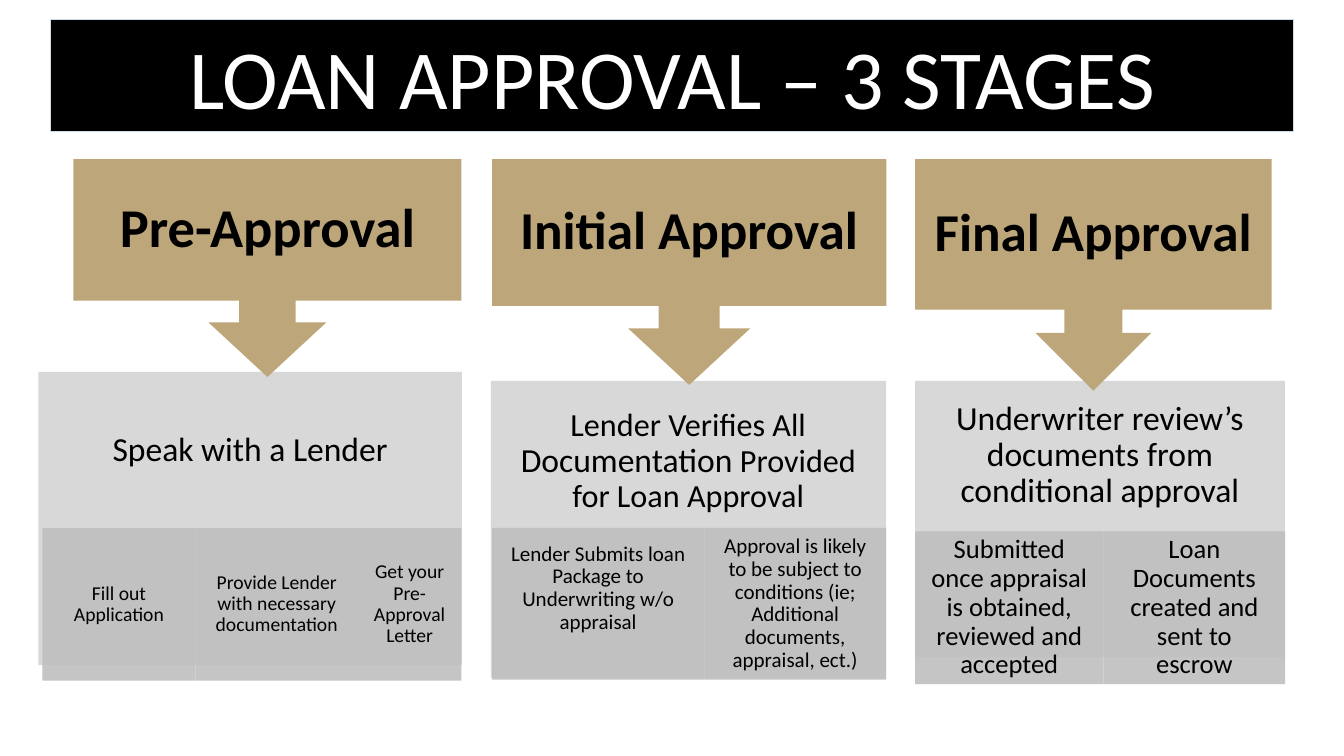
import pptx
import pptx.util
import pptx.dml.color
import pptx.enum.shapes
import pptx.enum.text
import lxml.etree

Cm, Pt = pptx.util.Cm, pptx.util.Pt
RGBColor = pptx.dml.color.RGBColor
Kind = pptx.enum.shapes.MSO_SHAPE
Align = pptx.enum.text.PP_ALIGN
Anchor = pptx.enum.text.MSO_ANCHOR

BLACK = RGBColor(0x00, 0x00, 0x00)
WHITE = RGBColor(0xFF, 0xFF, 0xFF)
EDGE = RGBColor(0xCE, 0xDB, 0xE6)
GOLD = RGBColor(0xBD, 0xA6, 0x79)
PALE = RGBColor(0xD8, 0xD8, 0xD8)
GREY = RGBColor(0xBF, 0xBF, 0xBF)
A = "http://schemas.openxmlformats.org/drawingml/2006/main"

# Boxes are left, top, width, height in cm; pads are left/right, top, bottom.
# "edges" are the left sides of the steps, then the right side of the last.
STAGES = [
    dict(
        panel=(0.97, 9.37, 10.67, 7.39), pad=(0.48, 0.48, 3.89),
        task=[("Speak with a Lender", 24)],
        head=(1.85, 4.01, 9.78, 5.49), name="Pre-Approval", size=39,
        inset=0.76, shaft=0.26, wing=0.27,
        edges=(1.07, 4.93, 9.02, 11.63), top=13.31, high=3.84,
        small=14, gap=(0.28, 0.05),
        steps=[("Fill out Application", 0),
               ("Provide Lender with necessary documentation", 0),
               ("Get your Pre-Approval Letter", 0)]),
    dict(
        panel=(12.37, 9.6, 9.96, 7.49), pad=(0.46, 0.46, 3.91),
        task=[("Lender Verifies All ", 23), ("Documentation", 24),
              (" Provided for Loan Approval", 23)],
        head=(12.4, 4.01, 9.94, 5.69), name="Initial Approval", size=38,
        inset=0.48, shaft=0.27, wing=0.27,
        edges=(12.4, 17.75, 22.33), top=13.3, high=3.83,
        small=15, gap=(0.3, 0.05),
        steps=[("Lender Submits loan Package to Underwriting w/o appraisal",
                0.77),
               ("Approval is likely to be subject to conditions "
                "(ie; Additional documents, appraisal, ect.)", 0)]),
    dict(
        panel=(23.06, 9.6, 9.32, 6.96), pad=(0.48, 0.48, 3.68),
        task=[("Underwriter review’s documents from conditional approval",
               24)],
        head=(23.06, 4.01, 8.99, 5.84), name="Final Approval", size=38,
        inset=0.48, shaft=0.25, wing=0.25,
        edges=(23.06, 27.81, 32.39), top=13.39, high=3.85,
        small=19, gap=(0.38, 0.08),
        steps=[("Submitted once appraisal is obtained, reviewed and accepted",
                0),
               ("Loan Documents created and sent to escrow", 0)]),
]


class Deck:
    font = "Calibri"

    def __init__(self):
        self.prs = pptx.Presentation()
        self.prs.slide_width = Cm(33.87)
        self.prs.slide_height = Cm(19.05)
        self.slide = self.prs.slides.add_slide(self.prs.slide_layouts[5])
        self.group = None

    def label(self, shape, runs, pad, color=BLACK, bold=False, lead=0.9):
        """Fill a shape with one centred paragraph of (text, size) runs."""
        frame = shape.text_frame
        frame.word_wrap = True
        frame.auto_size = pptx.enum.text.MSO_AUTO_SIZE.NONE
        frame.vertical_anchor = Anchor.MIDDLE
        side, above, below = pad
        frame.margin_left = frame.margin_right = Cm(side)
        frame.margin_top, frame.margin_bottom = Cm(above), Cm(below)
        para = frame.paragraphs[0]
        para.alignment = Align.CENTER
        para.line_spacing = lead
        for text, size in runs:
            run = para.add_run()
            run.text = text
            run.font.name = self.font
            run.font.size = Pt(size)
            run.font.bold = bold
            run.font.color.rgb = color

    def title(self, text, box):
        shape = self.slide.shapes.title
        shape.left, shape.top, shape.width, shape.height = map(Cm, box)
        shape.fill.solid()
        shape.fill.fore_color.rgb = BLACK
        shape.line.color.rgb = EDGE
        shape.line.width = Pt(0.75)
        self.label(shape, [(text, 60)], (0.25, 0.13, 0.13), WHITE, lead=1.0)

    def block(self, kind, box, fill):
        shape = self.group.shapes.add_shape(kind, *map(Cm, box))
        shape.shadow.inherit = False
        shape.fill.solid()
        shape.fill.fore_color.rgb = fill
        shape.line.fill.background()
        return shape

    def panel(self, box, runs, pad):
        self.label(self.block(Kind.RECTANGLE, box, PALE), runs, pad)

    def step(self, box, text, size, pad):
        shape = self.block(Kind.RECTANGLE, box, GREY)
        tint = shape.element.spPr.find(f"{{{A}}}solidFill/{{{A}}}srgbClr")
        lxml.etree.SubElement(tint, f"{{{A}}}alpha", val="90000")
        self.label(shape, [(text, size)], pad)

    def head(self, box, text, size, inset, shaft, wing):
        shape = self.block(Kind.DOWN_ARROW_CALLOUT, box, GOLD)
        for i, value in enumerate((shaft, wing, 0.25, 0.65)):
            shape.adjustments[i] = value
        self.label(shape, [(text, size)], (inset,) * 3, bold=True)

    def stage(self, s):
        self.group = self.slide.shapes.add_group_shape()
        self.panel(s["panel"], s["task"], s["pad"])
        side, rim = s["gap"]
        edges = s["edges"]
        for left, right, (text, lift) in zip(edges, edges[1:], s["steps"]):
            box = (left, s["top"], right - left, s["high"])
            self.step(box, text, s["small"], (side, rim, rim + lift))
        self.head(s["head"], s["name"], s["size"], s["inset"],
                  s["shaft"], s["wing"])


def main():
    deck = Deck()
    deck.title("LOAN APPROVAL – 3 STAGES", (1.28, 0.49, 31.32, 2.82))
    for stage in STAGES:
        deck.stage(stage)
    deck.prs.save("out.pptx")


if __name__ == "__main__":
    main()
